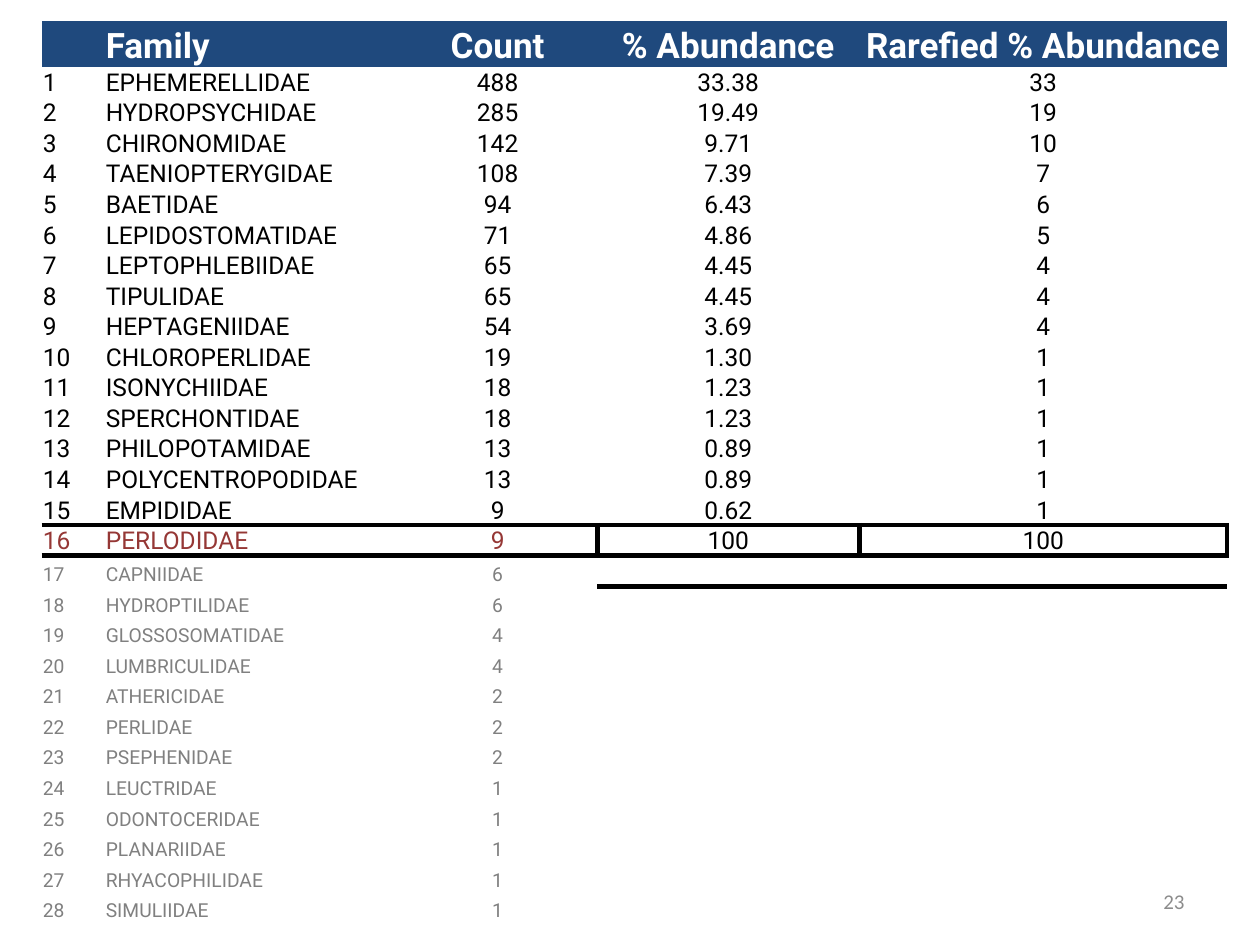
from dataclasses import dataclass
from typing import NamedTuple

import pptx
import pptx.dml.color
import pptx.enum.text
import pptx.oxml.ns
import pptx.util
from lxml import etree

ALIGN = pptx.enum.text.PP_ALIGN
ANCHOR = pptx.enum.text.MSO_ANCHOR
qn = pptx.oxml.ns.qn


class TextStyle(NamedTuple):
    size: int
    color: str
    bold: bool = False
    face: str = "Roboto"


@dataclass(frozen=True)
class Theme:
    header: TextStyle = TextStyle(20, "FFFFFF", bold=True)
    kept: TextStyle = TextStyle(14, "000000")
    cutoff: TextStyle = TextStyle(14, "953735")
    dropped: TextStyle = TextStyle(11, "808080")
    page_number: TextStyle = TextStyle(12, "8C8C8C", face="Calibri")
    header_fill: str = "1F497D"
    rule_color: str = "000000"
    rule_width: int = 3


class Family(NamedTuple):
    name: str
    count: int


THEME = Theme()
SLIDE_WIDTH, SLIDE_HEIGHT = pptx.util.Inches(10), pptx.util.Inches(7.5)
LEFT, TOP = pptx.util.Inches(0.33), pptx.util.Inches(0.17)
TABLE_HEIGHT, HEADER_HEIGHT = pptx.util.Inches(7.16), pptx.util.Inches(0.36)
COLUMN_WIDTHS = [pptx.util.Inches(w) for w in (0.5, 2.33, 1.58, 2.08, 2.92)]
HEADINGS = ["", "Family", "Count", "% Abundance", "Rarefied % Abundance"]
FIRST_CENTERED = 2
FIRST_TOTAL = 3
LAST_COLUMN = len(HEADINGS) - 1
KEPT = 15
TOTAL_ROW = KEPT + 1
NO_TABLE_STYLE = "{2D5ABB26-0587-4C30-8999-92F81FD0307C}"

FAMILIES = [
    Family("EPHEMERELLIDAE", 488),
    Family("HYDROPSYCHIDAE", 285),
    Family("CHIRONOMIDAE", 142),
    Family("TAENIOPTERYGIDAE", 108),
    Family("BAETIDAE", 94),
    Family("LEPIDOSTOMATIDAE", 71),
    Family("LEPTOPHLEBIIDAE", 65),
    Family("TIPULIDAE", 65),
    Family("HEPTAGENIIDAE", 54),
    Family("CHLOROPERLIDAE", 19),
    Family("ISONYCHIIDAE", 18),
    Family("SPERCHONTIDAE", 18),
    Family("PHILOPOTAMIDAE", 13),
    Family("POLYCENTROPODIDAE", 13),
    Family("EMPIDIDAE", 9),
    Family("PERLODIDAE", 9),
    Family("CAPNIIDAE", 6),
    Family("HYDROPTILIDAE", 6),
    Family("GLOSSOSOMATIDAE", 4),
    Family("LUMBRICULIDAE", 4),
    Family("ATHERICIDAE", 2),
    Family("PERLIDAE", 2),
    Family("PSEPHENIDAE", 2),
    Family("LEUCTRIDAE", 1),
    Family("ODONTOCERIDAE", 1),
    Family("PLANARIIDAE", 1),
    Family("RHYACOPHILIDAE", 1),
    Family("SIMULIIDAE", 1),
]


def table_rows() -> list[list[str]]:
    """Headings, then each family with its share of the kept total."""
    kept_total = sum(family.count for family in FAMILIES[:KEPT])
    rows = [HEADINGS]
    for rank, family in enumerate(FAMILIES, start=1):
        share = 100 * family.count / kept_total
        if rank <= KEPT:
            shares = [f"{share:.2f}", f"{share:.0f}"]
        elif rank == TOTAL_ROW:
            shares = ["100", "100"]
        else:
            shares = ["", ""]
        rows.append([str(rank), family.name, str(family.count), *shares])
    return rows


def cell_style(row: int, column: int) -> TextStyle:
    if row == 0:
        return THEME.header
    if row <= KEPT or (row == TOTAL_ROW and column >= FIRST_TOTAL):
        return THEME.kept
    return THEME.cutoff if row == TOTAL_ROW else THEME.dropped


def ruled_edges(row: int, column: int) -> list[str]:
    """Edges on the cutoff rule or the totals box, in schema order."""
    in_totals = column >= FIRST_TOTAL
    edges = {
        "L": row == TOTAL_ROW and column == FIRST_TOTAL,
        "R": row == TOTAL_ROW and column in (FIRST_TOTAL - 1, LAST_COLUMN),
        "T": row == TOTAL_ROW or (row == TOTAL_ROW + 1 and in_totals),
        "B": row == KEPT or (row == TOTAL_ROW and in_totals),
    }
    return [edge for edge, ruled in edges.items() if ruled]


def add_border(cell, edge: str) -> None:
    properties = cell._tc.get_or_add_tcPr()
    width = str(pptx.util.Pt(THEME.rule_width))
    line = etree.SubElement(properties, qn(f"a:ln{edge}"), w=width)
    fill = etree.SubElement(line, qn("a:solidFill"))
    etree.SubElement(fill, qn("a:srgbClr"), val=THEME.rule_color)


def write(frame, text: str, style: TextStyle, align) -> None:
    frame.text = text
    paragraph = frame.paragraphs[0]
    paragraph.alignment = align
    for run in paragraph.runs:
        run.font.name = style.face
        run.font.size = pptx.util.Pt(style.size)
        run.font.bold = style.bold
        run.font.color.rgb = pptx.dml.color.RGBColor.from_string(style.color)
    if not text:  # keeps an empty cell from stretching its row
        etree.SubElement(paragraph._p, qn("a:endParaRPr"), sz=str(style.size * 100))


def fill_cell(cell, text: str, row: int, column: int) -> None:
    cell.margin_left = cell.margin_right = cell.margin_top = pptx.util.Inches(0.01)
    cell.margin_bottom = 0
    cell.vertical_anchor = ANCHOR.BOTTOM
    align = ALIGN.CENTER if column >= FIRST_CENTERED else ALIGN.LEFT
    write(cell.text_frame, text, cell_style(row, column), align)
    for edge in ruled_edges(row, column):
        add_border(cell, edge)
    if row == 0:
        cell.fill.solid()
        cell.fill.fore_color.rgb = pptx.dml.color.RGBColor.from_string(THEME.header_fill)
    else:
        cell.fill.background()


def add_abundance_table(slide) -> None:
    rows = table_rows()
    table = slide.shapes.add_table(
        len(rows), len(HEADINGS), LEFT, TOP, sum(COLUMN_WIDTHS), TABLE_HEIGHT
    ).table
    table.first_row = table.horz_banding = False
    table._tbl.tblPr.find(qn("a:tableStyleId")).text = NO_TABLE_STYLE
    for column, width in zip(table.columns, COLUMN_WIDTHS):
        column.width = width
    family_height = (TABLE_HEIGHT - HEADER_HEIGHT) // len(FAMILIES)
    for row, texts in enumerate(rows):
        table.rows[row].height = family_height if row else HEADER_HEIGHT
        for column, text in enumerate(texts):
            fill_cell(table.cell(row, column), text, row, column)


def add_page_number(slide, number: int) -> None:
    frame = slide.shapes.add_textbox(
        pptx.util.Inches(7.17), pptx.util.Inches(6.95),
        pptx.util.Inches(2.33), pptx.util.Inches(0.4),
    ).text_frame
    frame.word_wrap = True
    frame.vertical_anchor = ANCHOR.MIDDLE
    write(frame, str(number), THEME.page_number, ALIGN.RIGHT)


def main() -> None:
    deck = pptx.Presentation()
    deck.slide_width, deck.slide_height = SLIDE_WIDTH, SLIDE_HEIGHT
    slide = deck.slides.add_slide(deck.slide_layouts[6])
    add_abundance_table(slide)
    add_page_number(slide, 23)
    deck.save("out.pptx")


if __name__ == "__main__":
    main()
